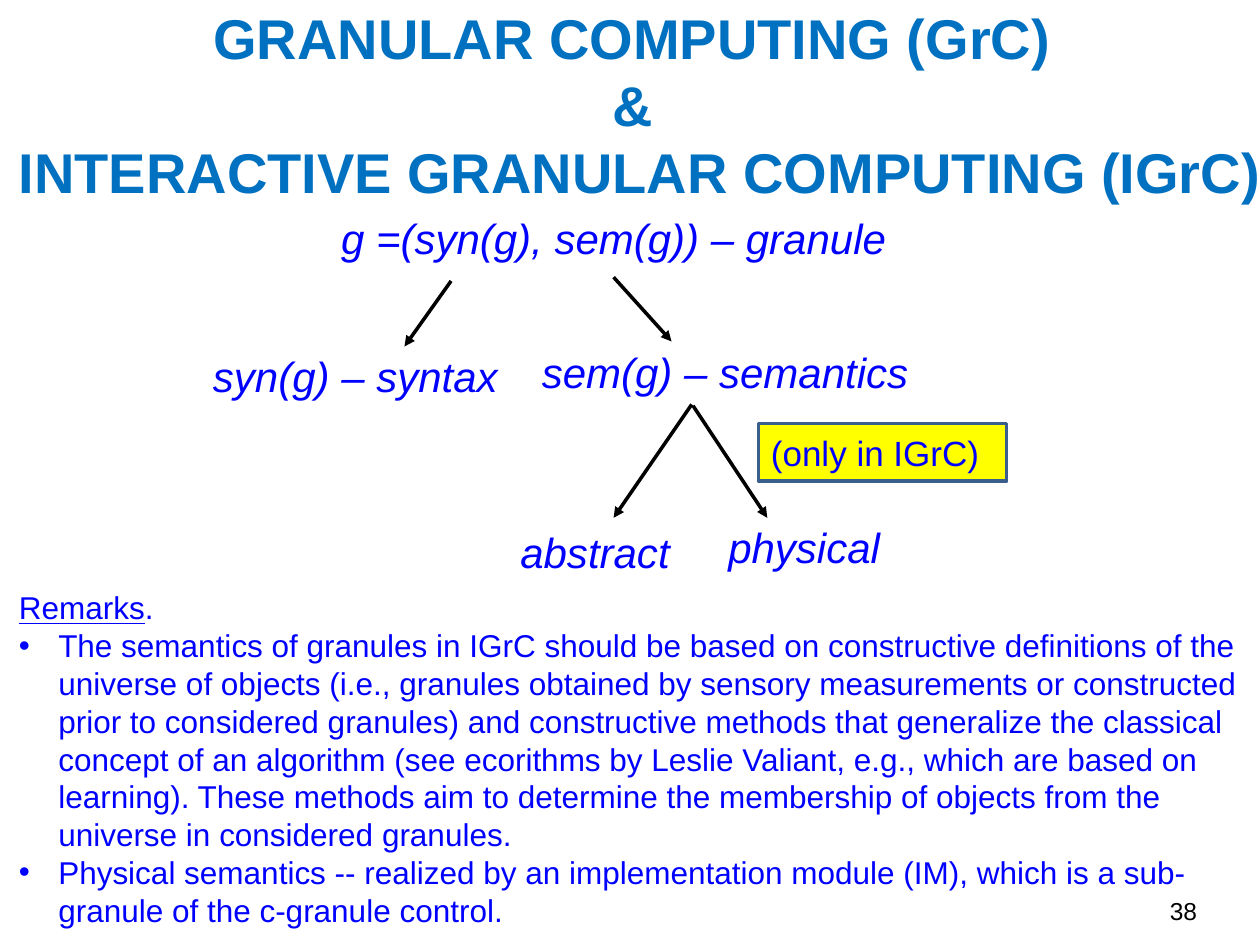
from dataclasses import dataclass

import lxml.etree
import pptx
import pptx.dml.color
import pptx.enum.shapes
import pptx.enum.text
import pptx.oxml.ns
import pptx.util

Pt = pptx.util.Pt
RGBColor = pptx.dml.color.RGBColor
Align = pptx.enum.text.PP_ALIGN
Anchor = pptx.enum.text.MSO_ANCHOR
Fit = pptx.enum.text.MSO_AUTO_SIZE
qn = pptx.oxml.ns.qn

SKY = RGBColor(0x00, 0x70, 0xC0)
BLUE = RGBColor(0x00, 0x00, 0xFF)
BLACK = RGBColor(0x00, 0x00, 0x00)
YELLOW = RGBColor(0xFF, 0xFF, 0x00)
STEEL = RGBColor(0x3A, 0x5F, 0x8C)


@dataclass
class Style:
    size: float
    color: RGBColor
    bold: bool = False
    italic: bool = False
    under: bool = False


@dataclass
class Box:
    left: float
    top: float
    width: float
    height: float

    def spans(self) -> tuple:
        return tuple(Pt(n) for n in (self.left, self.top, self.width, self.height))


@dataclass
class Node:
    text: str
    box: Box
    align: Align = Align.LEFT


@dataclass
class Arrow:
    start: tuple[float, float]
    end: tuple[float, float]


HEAD = Style(32, SKY, bold=True)
TERM = Style(24, BLUE, italic=True)
NOTE = Style(20, BLUE)
BODY = Style(18, BLUE)
LABEL = Style(18, BLUE, under=True)
PAGE = Style(14, BLACK)

TITLE = ["GRANULAR COMPUTING (GrC) ", "& ", "INTERACTIVE GRANULAR COMPUTING (IGrC)"]
NODES = [
    Node("g =(syn(g), sem(g)) – granule", Box(33.12, 121.68, 635, 29), Align.CENTER),
    Node("syn(g) – syntax", Box(121.68, 200.16, 188.64, 29)),
    Node("sem(g) – semantics", Box(309.6, 198, 288, 29)),
    Node("abstract", Box(297.36, 300.96, 105.84, 29)),
    Node("physical", Box(416.16, 298.08, 159.84, 29)),
]
ARROWS = [
    Arrow((257.76, 160.56), (231.12, 198)),
    Arrow((350.64, 158.4), (383.76, 195.12)),
    Arrow((395.28, 231.12), (350.64, 295.92)),
    Arrow((396, 231.84), (438.48, 295.92)),
]
REMARKS = [
    "The semantics of granules in IGrC should be based on constructive definitions "
    "of the universe of objects (i.e., granules obtained by sensory measurements or "
    "constructed prior to considered granules) and constructive methods that "
    "generalize the classical concept of an algorithm (see ecorithms by Leslie "
    "Valiant, e.g., which are based on learning). These methods aim to determine "
    "the membership of objects from the universe in considered granules.",
    "Physical semantics -- realized by an implementation module (IM), which is a "
    "sub-granule of the c-granule control.",
]


def add_run(para, text: str, style: Style) -> None:
    run = para.add_run()
    run.text = text
    font = run.font
    font.name = "Arial"
    font.size = Pt(style.size)
    font.color.rgb = style.color
    font.bold = style.bold
    font.italic = style.italic
    font.underline = style.under


def place(shape, box: Box) -> None:
    shape.left, shape.top, shape.width, shape.height = box.spans()


def set_frame(shape, anchor: Anchor):
    frame = shape.text_frame
    frame.word_wrap = True
    frame.auto_size = Fit.NONE
    frame.vertical_anchor = anchor
    return frame


def add_text(shapes, node: Node, style: Style, inset: bool = False) -> None:
    shape = shapes.add_textbox(*node.box.spans())
    frame = set_frame(shape, Anchor.TOP)
    if not inset:
        frame.margin_left = frame.margin_right = 0
        frame.margin_top = frame.margin_bottom = 0
    para = frame.paragraphs[0]
    para.alignment = node.align
    add_run(para, node.text, style)


def add_arrow(shapes, arrow: Arrow) -> None:
    kind = pptx.enum.shapes.MSO_CONNECTOR.STRAIGHT
    ends = [Pt(n) for n in arrow.start + arrow.end]
    link = shapes.add_connector(kind, *ends)
    link.line.color.rgb = BLACK
    link.line.width = Pt(2)
    line = link.line._get_or_add_ln()
    lxml.etree.SubElement(line, qn("a:tailEnd"), type="triangle")
    lxml.etree.SubElement(link._element.spPr, qn("a:effectLst"))


def add_badge(shapes) -> None:
    kind = pptx.enum.shapes.MSO_SHAPE.RECTANGLE
    shape = shapes.add_shape(kind, *Box(433.44, 241.92, 141.84, 33.12).spans())
    shape.shadow.inherit = False
    shape.fill.solid()
    shape.fill.fore_color.rgb = YELLOW
    shape.line.color.rgb = STEEL
    shape.line.width = Pt(2)
    para = set_frame(shape, Anchor.MIDDLE).paragraphs[0]
    para.alignment = Align.LEFT
    add_run(para, "(only in IGrC)", NOTE)


def fill_title(shape) -> None:
    place(shape, Box(0, 5.76, 731.52, 107.28))
    frame = set_frame(shape, Anchor.MIDDLE)
    for i, text in enumerate(TITLE):
        para = frame.add_paragraph() if i else frame.paragraphs[0]
        para.alignment = Align.CENTER
        add_run(para, text, HEAD)


def set_bullet(para, char: str = "") -> None:
    """Give the paragraph a hanging bullet, or none without a character."""
    props = para._p.get_or_add_pPr()
    hang = Pt(22.5) if char else 0
    props.set("marL", str(hang))
    props.set("indent", str(-hang))
    if char:
        lxml.etree.SubElement(props, qn("a:buChar"), char=char)
    else:
        lxml.etree.SubElement(props, qn("a:buNone"))


def fill_body(shape) -> None:
    place(shape, Box(3.6, 332.64, 711.36, 203.76))
    frame = set_frame(shape, Anchor.TOP)
    first = frame.paragraphs[0]
    first.space_before = Pt(0)
    set_bullet(first)
    add_run(first, "Remarks", LABEL)
    add_run(first, ".", BODY)
    for text in REMARKS:
        para = frame.add_paragraph()
        para.space_before = Pt(0)
        set_bullet(para, "•")
        add_run(para, text, BODY)


def main() -> None:
    deck = pptx.Presentation()
    deck.slide_width, deck.slide_height = Pt(720), Pt(540)
    slide = deck.slides.add_slide(deck.slide_layouts[1])
    shapes = slide.shapes
    fill_title(shapes.title)
    fill_body(slide.placeholders[1])
    tree = shapes.add_group_shape().shapes
    for node in NODES:
        add_text(tree, node, TERM)
    for arrow in ARROWS:
        add_arrow(tree, arrow)
    add_badge(shapes)
    page = Node("38", Box(642.24, 508.32, 48.96, 25.2), Align.RIGHT)
    add_text(shapes, page, PAGE, inset=True)
    deck.save("out.pptx")


if __name__ == "__main__":
    main()
